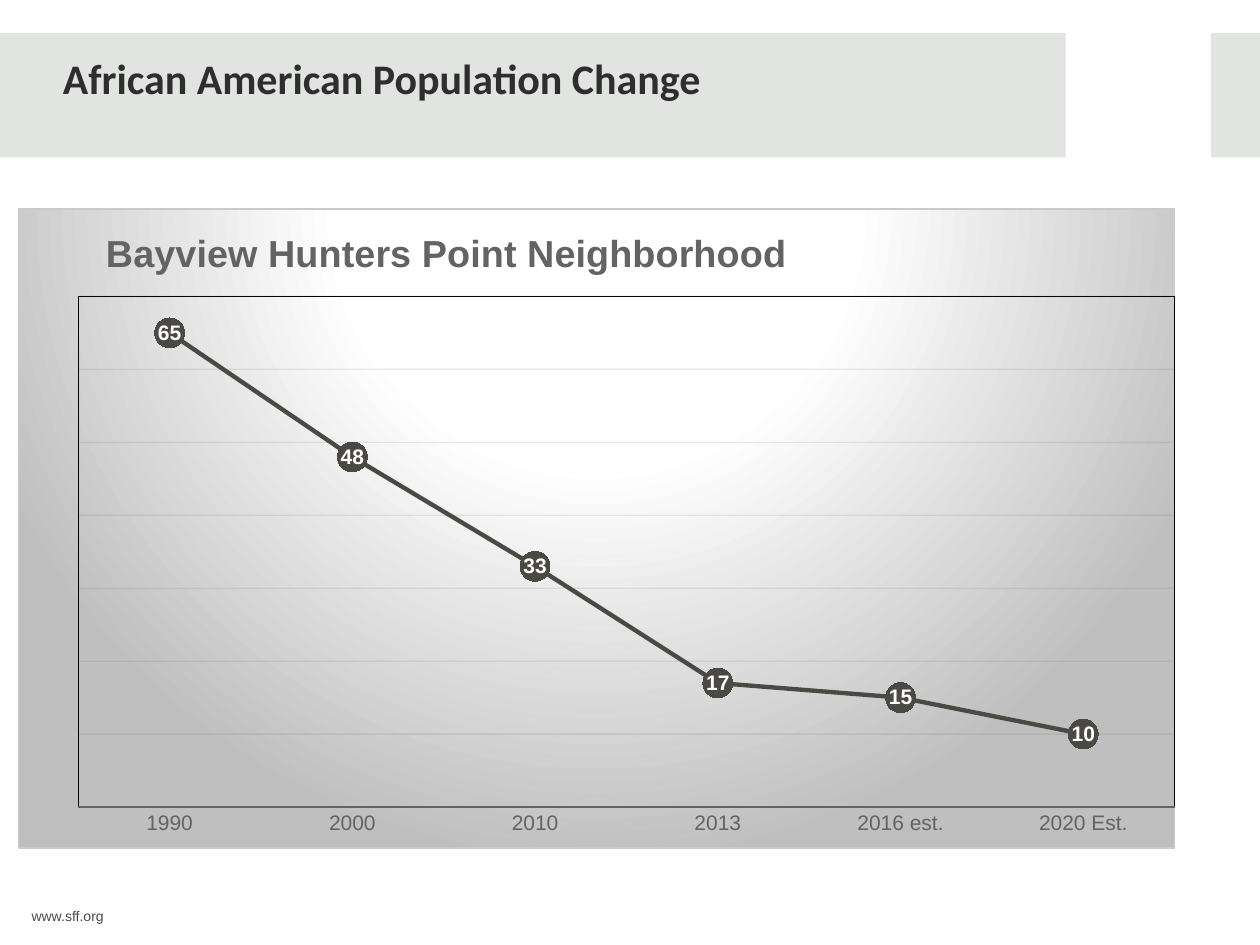
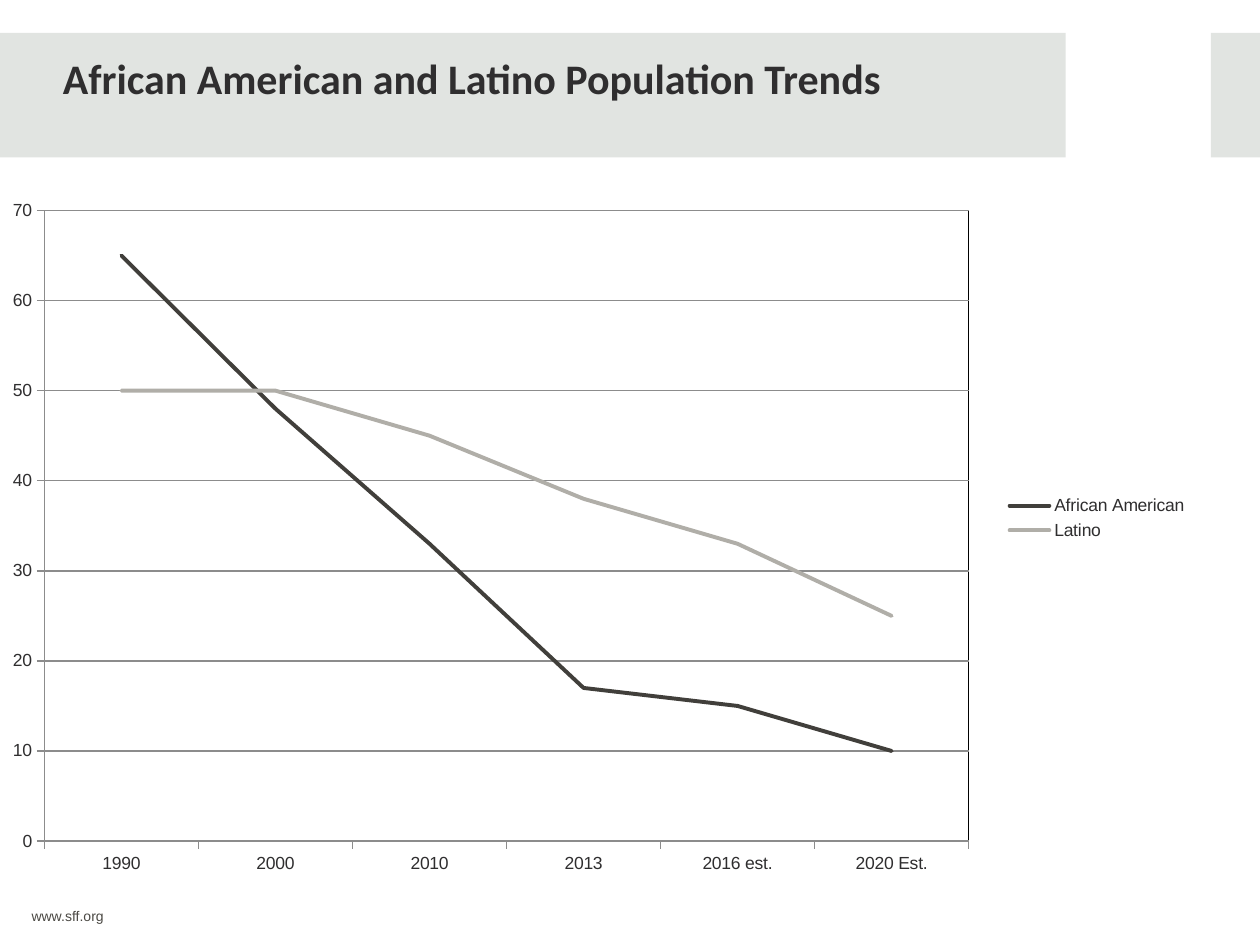
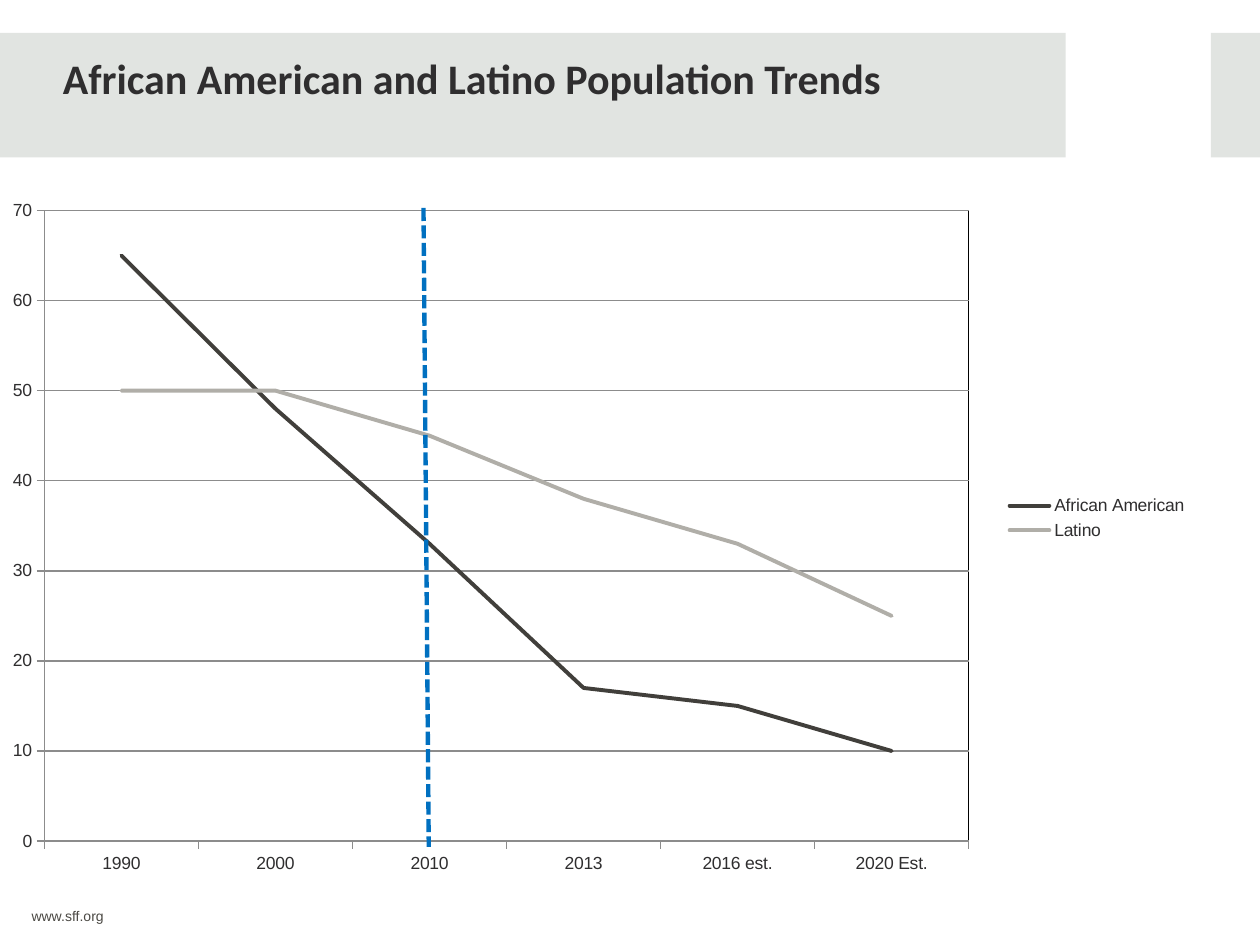
import pptx
import pptx.chart.data
import pptx.dml.color
import pptx.enum.chart
import pptx.enum.dml
import pptx.enum.shapes
import pptx.oxml
import pptx.oxml.ns
import pptx.util

Pt = pptx.util.Pt
RGBColor = pptx.dml.color.RGBColor
qn = pptx.oxml.ns.qn

BAND = RGBColor(0xE1, 0xE4, 0xE1)
INK = RGBColor(0x2F, 0x2E, 0x2F)
OLIVE = RGBColor(0x4B, 0x49, 0x44)
GRAY = RGBColor(0x64, 0x62, 0x64)
AXIS = RGBColor(0x8C, 0x8C, 0x8C)
FAINT = RGBColor(0x3A, 0x38, 0x3A)
DARK_LINE = RGBColor(0x41, 0x3F, 0x3B)
LIGHT_LINE = RGBColor(0xB0, 0xAE, 0xA8)
BLUE = RGBColor(0x00, 0x70, 0xC0)
WHITE = RGBColor(0xFF, 0xFF, 0xFF)

NAMESPACES = pptx.oxml.ns.nsdecls("c", "a")
YEARS = ["1990", "2000", "2010", "2013", "2016 est.", "2020 Est."]
AFRICAN_AMERICAN = [65, 48, 33, 17, 15, 10]
LATINO = [50, 50, 45, 38, 33, 25]
TREND_TITLE = "African American and Latino Population Trends"
TREND_SERIES = [
    ("African American", AFRICAN_AMERICAN, DARK_LINE, 2.25),
    ("Latino", LATINO, LIGHT_LINE, 2.25),
]
CHART_TYPES = pptx.enum.chart.XL_CHART_TYPE
SLIDES = [
    ("African American Population Change", CHART_TYPES.LINE_MARKERS,
     (10, 119, 662, 366), (0.052, 0.137, 0.948, 0.799),
     [("Series 1", AFRICAN_AMERICAN, OLIVE, 2.5)]),
    (TREND_TITLE, CHART_TYPES.LINE, (0, 93.6, 686, 405.4),
     (0.037, 0.066, 0.77, 0.89), TREND_SERIES),
    (TREND_TITLE, CHART_TYPES.LINE, (0, 93.6, 686, 405.4),
     (0.037, 0.066, 0.77, 0.89), TREND_SERIES),
]


def set_layout(parent, position, values, target=""):
    for layout in parent.findall(qn("c:layout")):
        parent.remove(layout)
    settings = "".join(f'<c:{name} val="{value}"/>' for name, value in values.items())
    parent.insert(position, pptx.oxml.parse_xml(
        f"<c:layout {NAMESPACES}><c:manualLayout>{target}"
        f'<c:xMode val="edge"/><c:yMode val="edge"/>{settings}'
        "</c:manualLayout></c:layout>"))


def add_text(slide, box, text, font_name, size, color, bold=False):
    frame = slide.shapes.add_textbox(*map(Pt, box)).text_frame
    frame.word_wrap = True
    frame.margin_left = frame.margin_right = frame.margin_top = frame.margin_bottom = 0
    paragraph = frame.paragraphs[0]
    paragraph.text = text
    paragraph.font.name = font_name
    paragraph.font.size = Pt(size)
    paragraph.font.bold = bold
    paragraph.font.color.rgb = color
    return paragraph


presentation = pptx.Presentation()
presentation.slide_width = Pt(720)
presentation.slide_height = Pt(540)

for title, chart_type, chart_box, plot_box, series_rows in SLIDES:
    slide = presentation.slides.add_slide(presentation.slide_layouts[6])
    for left, width in [(0, 609), (692, 28)]:
        band = slide.shapes.add_shape(
            pptx.enum.shapes.MSO_SHAPE.RECTANGLE, Pt(left), Pt(18.8), Pt(width), Pt(71.2))
        band.shadow.inherit = False
        band.fill.solid()
        band.fill.fore_color.rgb = BAND
        band.line.fill.background()
    footer = add_text(slide, (18, 520, 342, 11.5), "www.sff.org", "Arial", 8, OLIVE)
    footer.line_spacing = Pt(8)
    add_text(slide, (36, 29.8, 551, 29.5), title, "Calibri", 24, INK, True)

    chart_data = pptx.chart.data.CategoryChartData()
    chart_data.categories = YEARS
    for name, values, color, width in series_rows:
        chart_data.add_series(name, values)
    chart = slide.shapes.add_chart(chart_type, *map(Pt, chart_box), chart_data).chart
    chart.font.name = "Arial"
    chart.font.size = Pt(10)
    chart.font.color.rgb = INK
    chart.has_title = False
    chart.has_legend = False

    plot_area = chart._chartSpace.chart.plotArea
    set_layout(plot_area, 0, dict(zip("xywh", plot_box)),
               '<c:layoutTarget val="inner"/>')
    plot_area.append(pptx.oxml.parse_xml(
        f'<c:spPr {NAMESPACES}><a:noFill/><a:ln w="3175"><a:solidFill>'
        '<a:srgbClr val="000000"/></a:solidFill></a:ln></c:spPr>'))
    chart.plots[0].vary_by_categories = False
    for series, (name, values, color, width) in zip(chart.plots[0].series, series_rows):
        series.smooth = False
        series.format.line.color.rgb = color
        series.format.line.width = Pt(width)
        series.format.line._ln.set("cap", "rnd")

    value_axis = chart.value_axis
    value_axis.minimum_scale = 0
    value_axis.maximum_scale = 70
    value_axis.major_unit = 10
    value_axis.has_major_gridlines = True
    for line in [axis.format.line for axis in (chart.category_axis, value_axis)] + [
            value_axis.major_gridlines.format.line]:
        line.color.rgb = AXIS
        line.width = Pt(0.75)

    if chart_type == CHART_TYPES.LINE:
        chart.has_legend = True
        chart.legend.position = pptx.enum.chart.XL_LEGEND_POSITION.RIGHT
        chart.legend.include_in_layout = False
        chart.legend.font.name = "Arial"
        chart.legend.font.size = Pt(10)
        chart.legend.font.color.rgb = INK
        continue

    value_axis.visible = False
    value_axis.major_gridlines.format.line.color.rgb = FAINT
    grid_color = value_axis._element.find(qn("c:majorGridlines")).find(".//" + qn("a:srgbClr"))
    grid_color.append(pptx.oxml.parse_xml(f'<a:alpha {NAMESPACES} val="10000"/>'))

    category_axis = chart.category_axis
    category_axis.major_tick_mark = pptx.enum.chart.XL_TICK_MARK.NONE
    category_axis.tick_labels.font.name = "Arial"
    category_axis.tick_labels.font.size = Pt(12)
    category_axis.tick_labels.font.color.rgb = GRAY
    category_axis.format.line.color.rgb = GRAY
    category_axis.format.line.width = Pt(1.5)

    series = chart.plots[0].series[0]
    series.marker.style = pptx.enum.chart.XL_MARKER_STYLE.CIRCLE
    series.marker.size = 17
    series.marker.format.fill.solid()
    series.marker.format.fill.fore_color.rgb = OLIVE
    series.marker.format.line.fill.background()
    labels = series.data_labels
    labels.show_value = True
    labels.position = pptx.enum.chart.XL_LABEL_POSITION.CENTER
    labels.font.name = "Arial"
    labels.font.size = Pt(12)
    labels.font.bold = True
    labels.font.color.rgb = WHITE

    chart.has_title = True
    heading = chart.chart_title.text_frame.paragraphs[0]
    heading.text = "Bayview Hunters Point Neighborhood"
    heading.font.name = "Arial"
    heading.font.size = Pt(21.6)
    heading.font.bold = True
    heading.font.color.rgb = GRAY
    chart.chart_title.include_in_layout = False
    set_layout(chart.chart_title._element, 1, {"x": 0.07, "y": 0.02})

    stops = "".join(
        f'<a:gs pos="{position}000"><a:srgbClr val="{color}"/></a:gs>'
        for position, color in [(0, "FFFFFF"), (39, "FFFFFF"), (100, "BFBFBF")])
    chart._chartSpace.chart.addnext(pptx.oxml.parse_xml(
        f'<c:spPr {NAMESPACES}><a:gradFill><a:gsLst>{stops}</a:gsLst><a:path path="circle">'
        '<a:fillToRect l="50000" t="-80000" r="50000" b="180000"/></a:path></a:gradFill>'
        '<a:ln w="9525"><a:solidFill><a:srgbClr val="CBCACB"/></a:solidFill></a:ln></c:spPr>'))

divider = slide.shapes.add_connector(
    pptx.enum.shapes.MSO_CONNECTOR.STRAIGHT, Pt(242), Pt(118.8), Pt(245), Pt(484))
divider.line.color.rgb = BLUE
divider.line.width = Pt(2.5)
divider.line.dash_style = pptx.enum.dml.MSO_LINE.SQUARE_DOT
divider._element.spPr.append(pptx.oxml.parse_xml(f"<a:effectLst {NAMESPACES}/>"))

presentation.save("out.pptx")
